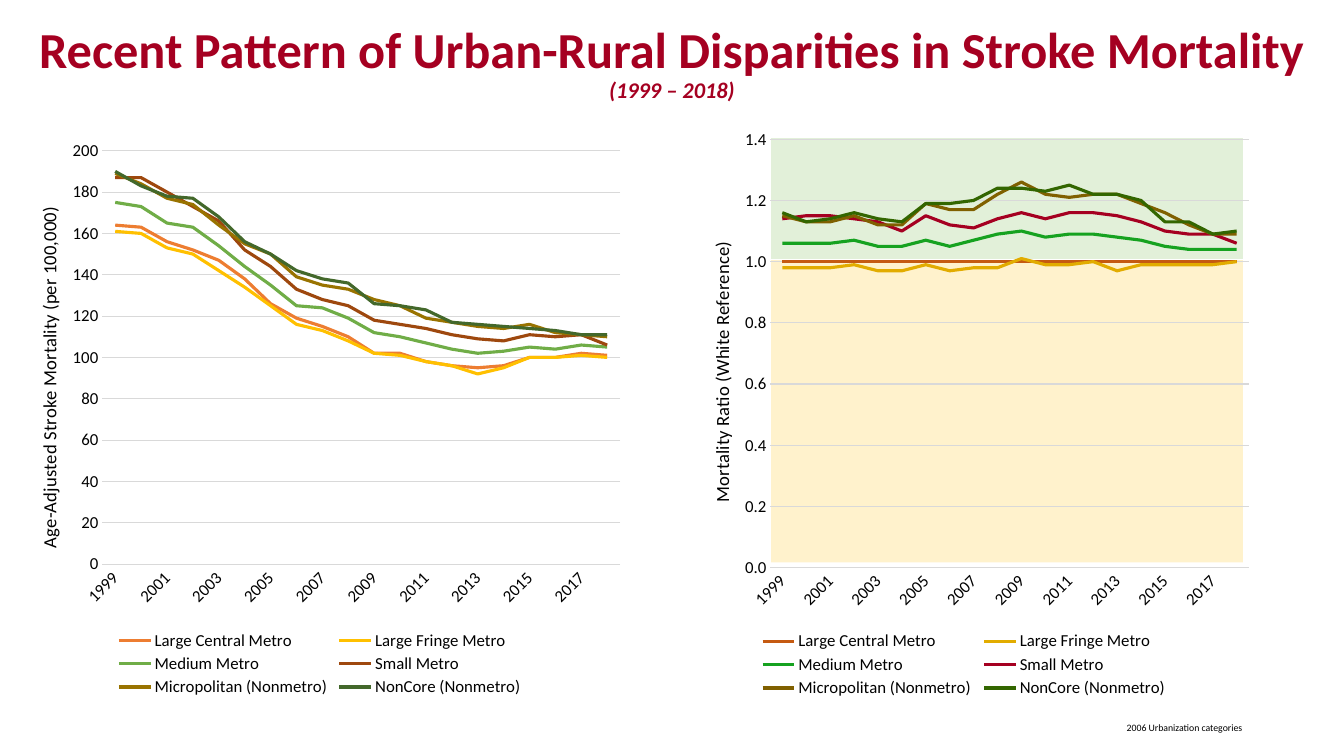
import dataclasses
import typing

import lxml.etree
import pptx
import pptx.chart.chart
import pptx.chart.data
import pptx.dml.color
import pptx.enum.chart
import pptx.enum.shapes
import pptx.enum.text
import pptx.oxml
import pptx.oxml.ns
import pptx.util

qn = pptx.oxml.ns.qn


@dataclasses.dataclass(frozen=True)
class Theme:
    font: str = "Calibri"
    text: str = "000000"
    accent: str = "A50021"
    rule: str = "D9D9D9"
    above: str = "E2F0D9"
    below: str = "FFF2CC"
    title_size: float = 36
    subtitle_size: float = 16
    axis_title_size: float = 13.3
    label_size: float = 12
    note_size: float = 7
    rule_width: float = 0.75
    series_width: float = 2.25


class Frame(typing.NamedTuple):
    """Left, top, width and height in percent of the surrounding area."""
    left: float
    top: float
    width: float
    height: float


@dataclasses.dataclass(frozen=True)
class Panel:
    frame: Frame
    axis_title: str
    number_format: str
    maximum: float
    step: float
    plot: Frame
    legend: Frame
    axis_title_at: tuple[float, float]
    colors: list[str]
    values: list[list[float]]


THEME = Theme()
WIDTH = pptx.util.Inches(13.333)
HEIGHT = pptx.util.Inches(7.5)
YEARS = [str(year) for year in range(1999, 2019)]
AREAS = ["Large Central Metro", "Large Fringe Metro", "Medium Metro",
         "Small Metro", "Micropolitan (Nonmetro)", "NonCore (Nonmetro)"]
TITLE = Frame(0, -1.2, 100, 19.33)
NOTE = Frame(83.1, 94.8, 16.5, 2.93)
BANDS = [(Frame(57.38, 34.4, 35.1, 40), THEME.below),
         (Frame(57.38, 18.27, 35.1, 16), THEME.above)]

RATIO = Panel(
    Frame(49.13, 16.67, 45, 76.27), "Mortality Ratio (White Reference)",
    "#,##0.0", 1.4, 0.2, Frame(18.2, 2.3, 79.1, 74.3), Frame(15.7, 87, 69, 12.8),
    (7.5, 19.5), ["C55A11", "E2AC00", "16A220", "A50021", "806000", "336600"],
    [[1] * len(YEARS),
     [0.98, 0.98, 0.98, 0.99, 0.97, 0.97, 0.99, 0.97, 0.98, 0.98,
      1.01, 0.99, 0.99, 1, 0.97, 0.99, 0.99, 0.99, 0.99, 1],
     [1.06, 1.06, 1.06, 1.07, 1.05, 1.05, 1.07, 1.05, 1.07, 1.09,
      1.1, 1.08, 1.09, 1.09, 1.08, 1.07, 1.05, 1.04, 1.04, 1.04],
     [1.14, 1.15, 1.15, 1.14, 1.13, 1.1, 1.15, 1.12, 1.11, 1.14,
      1.16, 1.14, 1.16, 1.16, 1.15, 1.13, 1.1, 1.09, 1.09, 1.06],
     [1.15, 1.13, 1.13, 1.15, 1.12, 1.12, 1.19, 1.17, 1.17, 1.22,
      1.26, 1.22, 1.21, 1.22, 1.22, 1.19, 1.16, 1.12, 1.09, 1.09],
     [1.16, 1.13, 1.14, 1.16, 1.14, 1.13, 1.19, 1.19, 1.2, 1.24,
      1.24, 1.23, 1.25, 1.22, 1.22, 1.2, 1.13, 1.13, 1.09, 1.1]])
RATE = Panel(
    Frame(0.6, 17.07, 46.43, 75.73), "Age-Adjusted Stroke Mortality (per 100,000)",
    "General", 200, 20, Frame(15.1, 3.8, 83, 72.2), Frame(16.7, 87, 66.5, 12.8),
    (4, 13), ["ED7D31", "FFC000", "70AD47", "9E480E", "997300", "43682B"],
    [[164, 163, 156, 152, 147, 138, 126, 119, 115, 110,
      102, 102, 98, 96, 95, 96, 100, 100, 102, 101],
     [161, 160, 153, 150, 142, 134, 125, 116, 113, 108,
      102, 101, 98, 96, 92, 95, 100, 100, 101, 100],
     [175, 173, 165, 163, 154, 144, 135, 125, 124, 119,
      112, 110, 107, 104, 102, 103, 105, 104, 106, 105],
     [187, 187, 180, 173, 166, 152, 144, 133, 128, 125,
      118, 116, 114, 111, 109, 108, 111, 110, 111, 106],
     [189, 184, 177, 174, 164, 155, 150, 139, 135, 133,
      128, 125, 119, 117, 115, 114, 116, 112, 111, 110],
     [190, 183, 178, 177, 168, 156, 150, 142, 138, 136,
      126, 125, 123, 117, 116, 115, 114, 113, 111, 111]])


def on_slide(frame: Frame) -> list[int]:
    return [int(share * side / 100)
            for share, side in zip(frame, (WIDTH, HEIGHT, WIDTH, HEIGHT))]


def rgb(color: str) -> pptx.dml.color.RGBColor:
    return pptx.dml.color.RGBColor.from_string(color)


def style(font: typing.Any, size: float, color: str = THEME.text,
          bold: bool = False, italic: bool = False) -> None:
    font.name, font.size, font.bold, font.italic = (
        THEME.font, pptx.util.Pt(size), bold, italic)
    font.color.rgb = rgb(color)


def draw_line(line: typing.Any, color: str, width: float) -> None:
    line.color.rgb = rgb(color)
    line.width = pptx.util.Pt(width)


def set_layout(parent: typing.Any, shares: typing.Sequence[float],
               after: str | None = None, inner: bool = False) -> None:
    """Place a chart part by hand, in percent of the chart's area."""
    for old in parent.findall(qn("c:layout")):
        parent.remove(old)
    layout = lxml.etree.Element(qn("c:layout"))
    manual = lxml.etree.SubElement(layout, qn("c:manualLayout"))
    settings = [("layoutTarget", "inner")] if inner else []
    settings += [("xMode", "edge"), ("yMode", "edge")]
    settings += [(key, str(round(share / 100, 3))) for key, share in zip("xywh", shares)]
    for key, value in settings:
        lxml.etree.SubElement(manual, qn(f"c:{key}")).set("val", value)
    if after:
        parent.find(qn(after)).addnext(layout)
    else:
        parent.insert(0, layout)


def no_fill() -> typing.Any:
    properties = lxml.etree.Element(qn("c:spPr"))
    lxml.etree.SubElement(properties, qn("a:noFill"))
    line = lxml.etree.SubElement(properties, qn("a:ln"))
    lxml.etree.SubElement(line, qn("a:noFill"))
    return properties


def format_axes(chart: pptx.chart.chart.Chart, panel: Panel) -> None:
    years, values = chart.category_axis, chart.value_axis
    for axis in (years, values):
        axis.major_tick_mark = axis.minor_tick_mark = pptx.enum.chart.XL_TICK_MARK.NONE
        style(axis.tick_labels.font, THEME.label_size)
    draw_line(years.format.line, THEME.rule, THEME.rule_width)
    values.format.line.fill.background()
    draw_line(values.major_gridlines.format.line, THEME.rule, THEME.rule_width)
    values.minimum_scale, values.maximum_scale = 0, panel.maximum
    values.major_unit = panel.step
    values.tick_labels.number_format = panel.number_format
    values.tick_labels.number_format_is_linked = False
    text = values.axis_title.text_frame
    text.text = panel.axis_title
    style(text.paragraphs[0].runs[0].font, THEME.axis_title_size)

    root = chart.element
    root.xpath(".//c:catAx/c:txPr/a:bodyPr")[0].set("rot", "-2700000")
    skip = lxml.etree.Element(qn("c:tickLblSkip"))
    skip.set("val", "2")
    root.xpath(".//c:catAx/c:noMultiLvlLbl")[0].addprevious(skip)
    title = root.xpath(".//c:valAx/c:title")[0]
    title.xpath(".//a:bodyPr")[0].set("rot", "-5400000")
    set_layout(title, panel.axis_title_at, after="c:tx")


def add_panel(page: typing.Any, panel: Panel) -> None:
    data = pptx.chart.data.CategoryChartData(number_format=panel.number_format)
    data.categories = YEARS
    for area, values in zip(AREAS, panel.values):
        data.add_series(area, values)
    chart = page.shapes.add_chart(
        pptx.enum.chart.XL_CHART_TYPE.LINE, *on_slide(panel.frame), data).chart
    style(chart.font, 10)
    chart.has_title = False
    chart.has_legend = True
    chart.legend.position = pptx.enum.chart.XL_LEGEND_POSITION.BOTTOM
    chart.legend.include_in_layout = False
    style(chart.legend.font, THEME.label_size)
    chart.plots[0].vary_by_categories = False
    for series, color in zip(chart.plots[0].series, panel.colors):
        series.smooth = False
        draw_line(series.format.line, color, THEME.series_width)
    format_axes(chart, panel)

    root = chart.element
    plot_area = root.xpath("./c:chart/c:plotArea")[0]
    set_layout(plot_area, panel.plot, inner=True)
    set_layout(root.xpath("./c:chart/c:legend")[0], panel.legend, after="c:legendPos")
    plot_area.append(no_fill())
    root.find(qn("c:chart")).addnext(no_fill())


def add_band(page: typing.Any, frame: Frame, color: str) -> None:
    band = page.shapes.add_shape(
        pptx.enum.shapes.MSO_SHAPE.RECTANGLE, *on_slide(frame))
    band.shadow.inherit = False
    band.fill.solid()
    band.fill.fore_color.rgb = rgb(color)
    band.line.fill.background()


def fill_title(page: typing.Any) -> None:
    box = page.shapes.title
    box.left, box.top, box.width, box.height = on_slide(TITLE)
    text = box.text_frame
    text.text = "Recent Pattern of Urban-Rural Disparities in Stroke Mortality\n(1999 – 2018)"
    text.auto_size = pptx.enum.text.MSO_AUTO_SIZE.NONE
    text.vertical_anchor = pptx.enum.text.MSO_ANCHOR.MIDDLE
    for para, size, italic in zip(
            text.paragraphs, (THEME.title_size, THEME.subtitle_size), (False, True)):
        para.alignment = pptx.enum.text.PP_ALIGN.CENTER
        para.line_spacing = 0.9
        style(para.runs[0].font, size, THEME.accent, bold=True, italic=italic)


def add_note(page: typing.Any) -> None:
    text = page.shapes.add_textbox(*on_slide(NOTE)).text_frame
    text.word_wrap = True
    text.text = "2006 Urbanization categories"
    style(text.paragraphs[0].runs[0].font, THEME.note_size)


def main() -> None:
    deck = pptx.Presentation()
    deck.slide_width, deck.slide_height = WIDTH, HEIGHT
    page = deck.slides.add_slide(deck.slide_layouts.get_by_name("Title Only"))
    for frame, color in BANDS:
        add_band(page, frame, color)
    add_panel(page, RATIO)
    fill_title(page)
    add_panel(page, RATE)
    add_note(page)
    deck.save("out.pptx")


if __name__ == "__main__":
    main()
